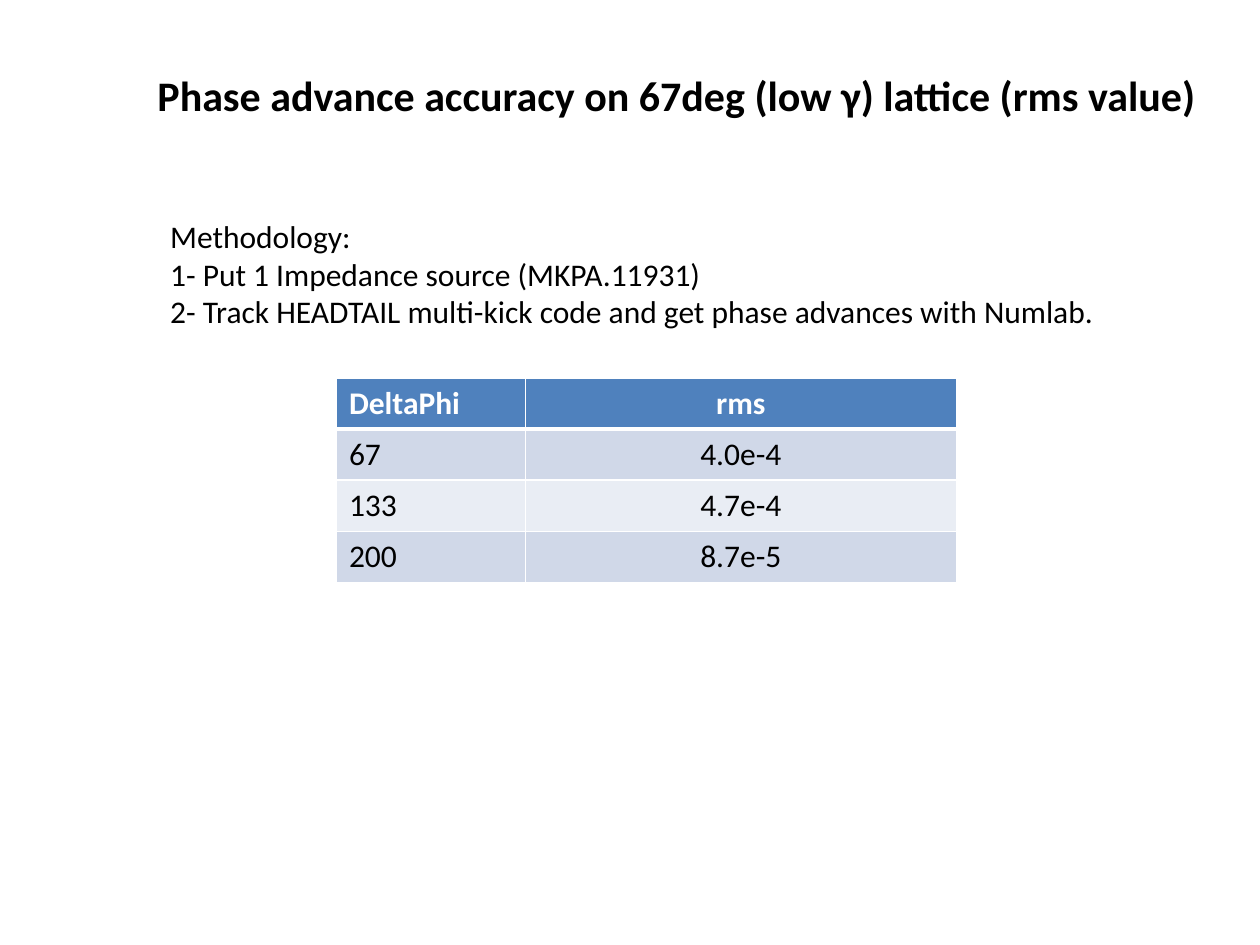
from pptx import Presentation
from pptx.dml.color import RGBColor
from pptx.enum.text import MSO_ANCHOR, MSO_AUTO_SIZE, PP_ALIGN
from pptx.oxml.ns import qn
from pptx.util import Inches, Pt
from lxml.etree import SubElement

COLORS = {
    "text": "000000",
    "white": "FFFFFF",
    "header": "4F81BD",
    "band_dark": "D0D8E8",
    "band_light": "E9EDF4",
}
FONT = "Calibri"
TITLE = "Phase advance accuracy on 67deg (low γ) lattice (rms value)"
METHOD = [
    "Methodology:",
    "1- Put 1 Impedance source (MKPA.11931)",
    "2- Track HEADTAIL multi-kick code and get phase advances with Numlab.",
]
ROWS = [
    ("DeltaPhi", "rms"),
    ("67", "4.0e-4"),
    ("133", "4.7e-4"),
    ("200", "8.7e-5"),
]
COL_WIDTHS = (1.5, 3.42)
ROW_HEIGHT = 0.405


def add_run(p, text, size, color="text", bold=False):
    """Add one formatted run to a paragraph."""
    r = p.add_run()
    r.text = text
    r.font.name = FONT
    r.font.size = Pt(size)
    r.font.bold = bold
    r.font.color.rgb = RGBColor.from_string(COLORS[color])


def place(sp, left, top, width, height):
    """Move a placeholder and return its prepared text frame."""
    sp.left, sp.top = Inches(left), Inches(top)
    sp.width, sp.height = Inches(width), Inches(height)
    tf = sp.text_frame
    tf.word_wrap = True
    tf.auto_size = MSO_AUTO_SIZE.NONE
    tf.vertical_anchor = MSO_ANCHOR.TOP
    return tf


def add_title(s):
    """Fill the title placeholder."""
    p = place(s.shapes.title, 1.08, 0.5, 8.58, 0.5).paragraphs[0]
    p.alignment = PP_ALIGN.CENTER
    add_run(p, TITLE, 24, bold=True)


def add_method(s):
    """Fill the body placeholder with the unbulleted method steps."""
    tf = place(s.placeholders[1], 1.25, 1.67, 8.17, 1.01)
    for i, line in enumerate(METHOD):
        p = tf.add_paragraph() if i else tf.paragraphs[0]
        p.space_before = Pt(0)
        pPr = p._p.get_or_add_pPr()
        pPr.set("marL", "0")
        pPr.set("indent", "0")
        SubElement(pPr, qn("a:buNone"))
        add_run(p, line, 18)


def set_borders(cell, top, bottom):
    """Draw white cell borders with the given top and bottom widths."""
    tcPr = cell._tc.get_or_add_tcPr()
    for side, width in (("L", 1), ("R", 1), ("T", top), ("B", bottom)):
        ln = SubElement(tcPr, qn(f"a:ln{side}"), w=str(Pt(width)))
        fill = SubElement(ln, qn("a:solidFill"))
        SubElement(fill, qn("a:srgbClr"), val=COLORS["white"])


def add_rms_table(s):
    """Add the banded table of rms values."""
    tbl = s.shapes.add_table(
        len(ROWS), len(COL_WIDTHS), Inches(2.67), Inches(3),
        Inches(sum(COL_WIDTHS)), Inches(ROW_HEIGHT * len(ROWS)),
    ).table
    for col, width in zip(tbl.columns, COL_WIDTHS):
        col.width = Inches(width)
    for i, row in enumerate(ROWS):
        header = i == 0
        band = "header" if header else "band_dark" if i % 2 else "band_light"
        for j, text in enumerate(row):
            cell = tbl.cell(i, j)
            set_borders(cell, 3 if i == 1 else 1, 3 if header else 1)
            cell.fill.solid()
            cell.fill.fore_color.rgb = RGBColor.from_string(COLORS[band])
            p = cell.text_frame.paragraphs[0]
            p.alignment = PP_ALIGN.CENTER if j else PP_ALIGN.LEFT
            add_run(p, text, 18, "white" if header else "text", header)


def main():
    """Build and save the slide."""
    prs = Presentation()
    prs.slide_width, prs.slide_height = Inches(10), Inches(7.5)
    s = prs.slides.add_slide(prs.slide_layouts[1])
    add_rms_table(s)
    add_title(s)
    add_method(s)
    prs.save("out.pptx")


if __name__ == "__main__":
    main()
